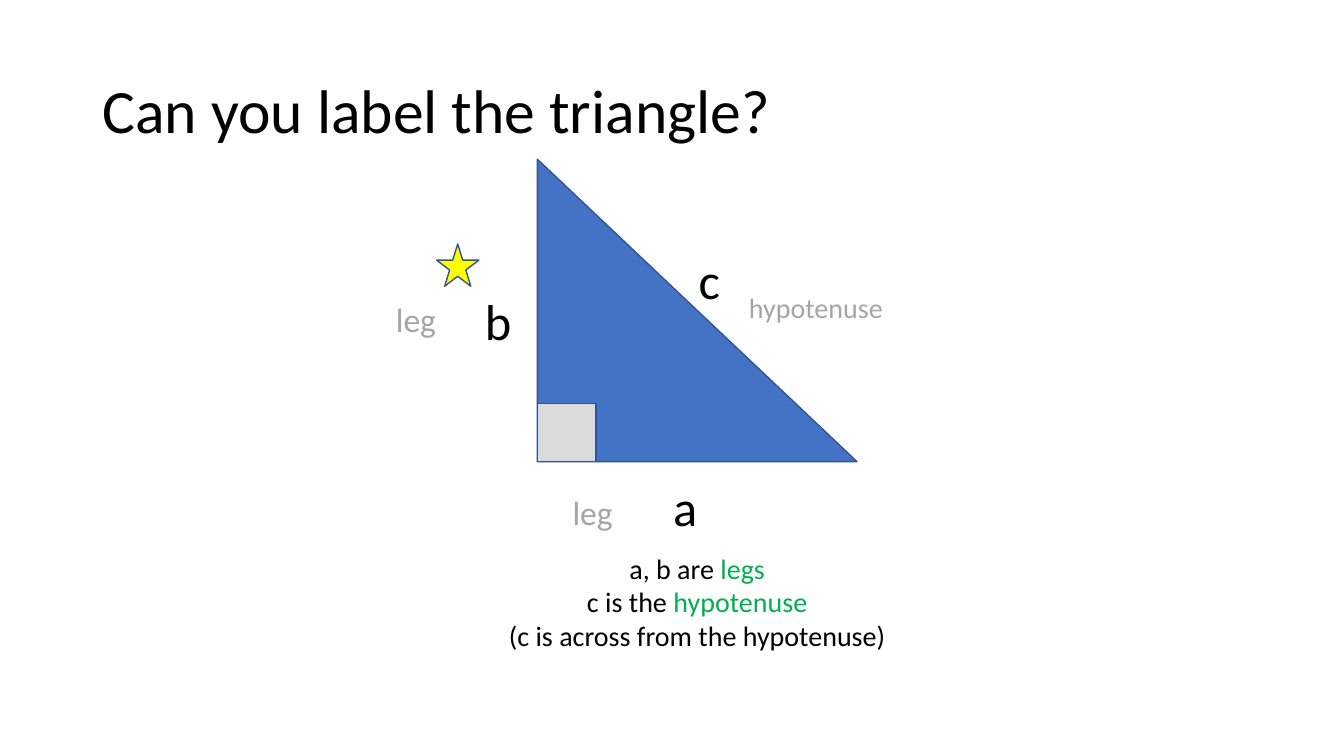
from dataclasses import dataclass

from pptx import Presentation
from pptx.dml.color import RGBColor
from pptx.enum.shapes import MSO_SHAPE as SHAPE
from pptx.enum.text import MSO_ANCHOR as ANCHOR
from pptx.enum.text import MSO_AUTO_SIZE as AUTO
from pptx.enum.text import PP_ALIGN as ALIGN
from pptx.slide import Slide
from pptx.util import Inches, Pt

COLORS = {
    "black": "000000",
    "gray": "A5A5A5",
    "green": "00B050",
    "blue": "4472C4",
    "silver": "DBDBDB",
    "yellow": "FFFF00",
    "outline": "325491",
}

Box = tuple[float, float, float, float]
Run = tuple[str, str]


@dataclass(frozen=True)
class Figure:
    kind: SHAPE
    box: Box
    fill: str


@dataclass(frozen=True)
class Label:
    box: Box
    lines: list[list[Run]]
    size: int
    align: ALIGN = ALIGN.LEFT
    anchor: ANCHOR = ANCHOR.TOP
    auto_size: AUTO = AUTO.SHAPE_TO_FIT_TEXT
    spacing: float = 1.0


FIGURES = [
    Figure(SHAPE.RIGHT_TRIANGLE, (5.33, 1.58, 3.17, 3), "blue"),
    Figure(SHAPE.RECTANGLE, (5.33, 4, 0.58, 0.58), "silver"),
    Figure(SHAPE.STAR_5_POINT, (4.33, 2.42, 0.42, 0.42), "yellow"),
]

LABELS = [
    Label((0.92, 0.4, 11.5, 1.45), [[("Can you label the triangle?", "black")]], 44,
          anchor=ANCHOR.MIDDLE, auto_size=AUTO.NONE, spacing=0.9),
    Label((4.42, 2.83, 0.75, 0.71), [[("b", "black")]], 36, ALIGN.RIGHT),
    Label((6.83, 2.42, 0.83, 0.71), [[("c", "black")]], 36),
    Label((6.42, 4.67, 0.75, 0.71), [[("a", "black")]], 36, ALIGN.CENTER),
    Label((3.83, 5.42, 6.17, 1.11), [
        [("a, b are ", "black"), ("legs", "green")],
        [("c is the ", "black"), ("hypotenuse", "green")],
        [("(c is across from the hypotenuse)", "black")],
    ], 20, ALIGN.CENTER),
    Label((3.5, 2.92, 1.25, 0.5), [[("leg", "gray")]], 24, ALIGN.CENTER),
    Label((7.33, 2.83, 1.92, 0.44), [[("hypotenuse", "gray")]], 20),
    Label((5.58, 4.83, 0.92, 0.5), [[("leg", "gray")]], 24),
]


def rgb(name: str) -> RGBColor:
    return RGBColor.from_string(COLORS[name])


def apply(target: object, values: dict[str, object]) -> None:
    for name, value in values.items():
        setattr(target, name, value)


def draw_figure(s: Slide, figure: Figure) -> None:
    sp = s.shapes.add_shape(figure.kind, *map(Inches, figure.box))
    sp.shadow.inherit = False
    sp.fill.solid()
    sp.fill.fore_color.rgb = rgb(figure.fill)
    sp.line.color.rgb = rgb("outline")
    sp.line.width = Pt(1)


def draw_label(s: Slide, label: Label) -> None:
    tf = s.shapes.add_textbox(*map(Inches, label.box)).text_frame
    apply(tf, {"word_wrap": True, "auto_size": label.auto_size,
               "vertical_anchor": label.anchor})
    for i, line in enumerate(label.lines):
        p = tf.add_paragraph() if i else tf.paragraphs[0]
        apply(p, {"alignment": label.align, "line_spacing": label.spacing})
        for text, color in line:
            r = p.add_run()
            r.text = text
            apply(r.font, {"name": "Calibri", "size": Pt(label.size)})
            r.font.color.rgb = rgb(color)


def main() -> None:
    prs = Presentation()
    apply(prs, {"slide_width": Inches(13.33), "slide_height": Inches(7.5)})
    s = prs.slides.add_slide(prs.slide_layouts[6])
    for figure in FIGURES:
        draw_figure(s, figure)
    for label in LABELS:
        draw_label(s, label)
    prs.save("out.pptx")


if __name__ == "__main__":
    main()
